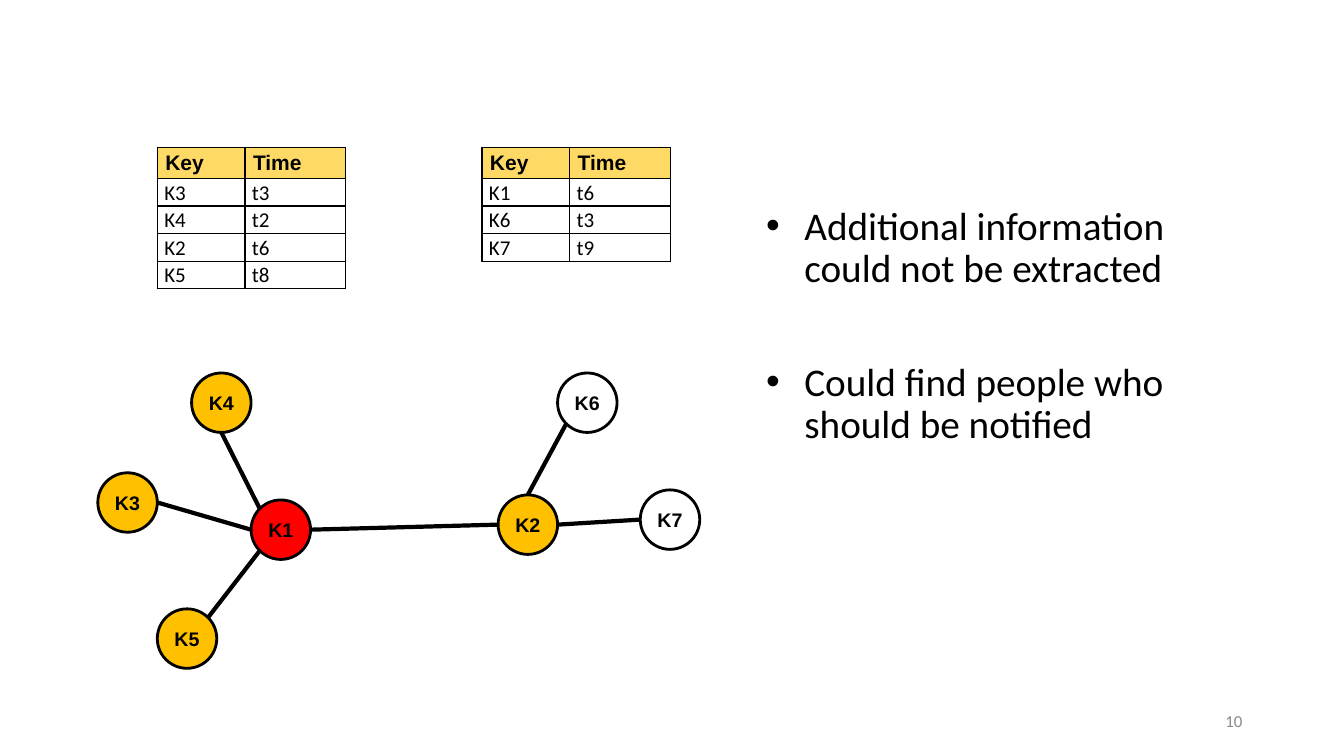
from dataclasses import dataclass
from math import cos, radians, sin

from lxml.etree import SubElement
from pptx import Presentation
from pptx.dml.color import RGBColor
from pptx.enum.shapes import MSO_CONNECTOR as Connector, MSO_SHAPE as Shape
from pptx.enum.text import MSO_ANCHOR as Anchor, PP_ALIGN as Align
from pptx.oxml.ns import qn
from pptx.util import Inches, Pt


@dataclass(frozen=True)
class Theme:
    ink: str = "000000"
    header: str = "FFD966"
    infected: str = "FF0000"
    contact: str = "FFC000"
    muted: str = "888888"
    label_font: str = "Arial"
    body_font: str = "Calibri"
    body_size: int = 28
    cell_size: int = 15
    node_size: int = 14
    number_size: int = 12
    border: int = 1
    outline: int = 2
    edge: int = 3


DIAMETER = 0.59
ROW_HEIGHT = 0.25
COLUMN_WIDTHS = (0.87, 1)

# Compass angles where edges meet a node, clockwise from the right
RIGHT, BOTTOM, BOTTOM_LEFT, LEFT, TOP_LEFT, TOP, TOP_RIGHT = 0, 90, 135, 180, 225, 270, 315


def write(para, text, *, size, font, color, bold=False, align=None, spacing=None, before=None):
    """Put one formatted span of text in a paragraph."""
    span = para.add_run()
    span.text = text
    span.font.size = Pt(size)
    span.font.name = font
    span.font.bold = bold
    span.font.color.rgb = RGBColor.from_string(color)
    para.alignment = align
    para.line_spacing = spacing
    if before is not None:
        para.space_before = Pt(before)


class ContactPage:
    def __init__(self, page, theme):
        self.page = page
        self.theme = theme
        self.nodes = {}

    def paint(self, item, color):
        if color is None:
            item.fill.background()
        else:
            item.fill.solid()
            item.fill.fore_color.rgb = RGBColor.from_string(color)

    def rule(self, line, width):
        line.color.rgb = RGBColor.from_string(self.theme.ink)
        line.width = Pt(width)

    def border(self, cell):
        properties = cell._tc.get_or_add_tcPr()
        for side in ("a:lnL", "a:lnR", "a:lnT", "a:lnB"):
            line = SubElement(properties, qn(side), w=str(Pt(self.theme.border)))
            fill = SubElement(line, qn("a:solidFill"))
            SubElement(fill, qn("a:srgbClr"), val=self.theme.ink)

    def table(self, left, top, rows):
        theme = self.theme
        table = self.page.shapes.add_table(
            len(rows), len(COLUMN_WIDTHS), Inches(left), Inches(top),
            Inches(sum(COLUMN_WIDTHS)), Inches(ROW_HEIGHT * len(rows))).table
        table.horz_banding = False
        for column, width in zip(table.columns, COLUMN_WIDTHS):
            column.width = Inches(width)
        for row_index, row in enumerate(rows):
            heading = row_index == 0
            margins = (0.08, 0.04, 0.04, 0.04) if heading else (0.07, 0, 0.07, 0)
            for column_index, text in enumerate(row):
                cell = table.cell(row_index, column_index)
                (cell.margin_left, cell.margin_top,
                 cell.margin_right, cell.margin_bottom) = map(Inches, margins)
                cell.vertical_anchor = Anchor.MIDDLE
                self.border(cell)
                self.paint(cell, theme.header if heading else None)
                write(cell.text_frame.paragraphs[0], text, size=theme.cell_size,
                      font=theme.label_font if heading else theme.body_font,
                      color=theme.ink, bold=heading, spacing=None if heading else 1.07)

    def node(self, name, left, top, color):
        theme = self.theme
        circle = self.page.shapes.add_shape(
            Shape.OVAL, Inches(left), Inches(top), Inches(DIAMETER), Inches(DIAMETER))
        circle.shadow.inherit = False
        self.paint(circle, color)
        self.rule(circle.line, theme.outline)
        frame = circle.text_frame
        frame.margin_left = frame.margin_right = frame.margin_top = frame.margin_bottom = 0
        frame.vertical_anchor = Anchor.MIDDLE
        write(frame.paragraphs[0], name, size=theme.node_size, font=theme.label_font,
              color=theme.ink, bold=True, align=Align.CENTER)
        self.nodes[name] = (left + DIAMETER / 2, top + DIAMETER / 2)

    def rim(self, name, angle):
        x, y = self.nodes[name]
        radius = DIAMETER / 2
        return (Inches(x + radius * cos(radians(angle))),
                Inches(y + radius * sin(radians(angle))))

    def edge(self, start, start_angle, end, end_angle):
        line = self.page.shapes.add_connector(
            Connector.STRAIGHT, *self.rim(start, start_angle), *self.rim(end, end_angle))
        self.rule(line.line, self.theme.edge)
        SubElement(line._element.spPr, qn("a:effectLst"))

    def text_box(self, left, top, width, height, anchor=Anchor.TOP):
        box = self.page.shapes.add_textbox(
            Inches(left), Inches(top), Inches(width), Inches(height))
        frame = box.text_frame
        frame.word_wrap = True
        frame.vertical_anchor = anchor
        return frame

    def bullets(self, left, top, width, height, items):
        theme = self.theme
        frame = self.text_box(left, top, width, height)
        for index, text in enumerate(items):
            para = frame.add_paragraph() if index else frame.paragraphs[0]
            write(para, text, size=theme.body_size, font=theme.body_font, color=theme.ink,
                  spacing=0.9, before=51 if index else 10)
            properties = para._p.get_or_add_pPr()
            properties.set("marL", str(Inches(0.5)))
            properties.set("indent", str(Inches(-0.38)))
            SubElement(properties, qn("a:buFont"), typeface=theme.label_font)
            SubElement(properties, qn("a:buChar"), char="•")

    def page_number(self, left, top, width, height, text):
        theme = self.theme
        frame = self.text_box(left, top, width, height, Anchor.MIDDLE)
        write(frame.paragraphs[0], text, size=theme.number_size, font=theme.body_font,
              color=theme.muted, align=Align.RIGHT)


def main():
    deck = Presentation()
    deck.slide_width, deck.slide_height = Inches(13.33), Inches(7.5)
    theme = Theme()
    blank_layout = deck.slide_layouts[6]
    page = ContactPage(deck.slides.add_slide(blank_layout), theme)

    # Contact lists of K1 and K2
    heading = ("Key", "Time")
    page.table(1.56, 1.46, [heading, ("K3", "t3"), ("K4", "t2"), ("K2", "t6"), ("K5", "t8")])
    page.table(4.78, 1.46, [heading, ("K1", "t6"), ("K6", "t3"), ("K7", "t9")])

    # Contact graph
    for name, left, top, color in (
            ("K2", 4.94, 4.91, theme.contact),
            ("K1", 2.49, 4.96, theme.infected),
            ("K3", 0.97, 4.69, theme.contact),
            ("K5", 1.56, 6.04, theme.contact),
            ("K7", 6.35, 4.86, None),
            ("K4", 1.9, 3.7, theme.contact),
            ("K6", 5.53, 3.7, None)):
        page.node(name, left, top, color)
    for link in (
            ("K1", RIGHT, "K2", LEFT),
            ("K4", BOTTOM, "K1", TOP_LEFT),
            ("K1", LEFT, "K3", RIGHT),
            ("K1", BOTTOM_LEFT, "K5", TOP_RIGHT),
            ("K6", BOTTOM_LEFT, "K2", TOP),
            ("K7", LEFT, "K2", RIGHT)):
        page.edge(*link)

    # Findings and page number
    page.bullets(7.38, 2, 5.03, 4.76, [
        "Additional information could not be extracted",
        "Could find people who should be notified"])
    page.page_number(9.42, 6.95, 3, 0.4, "10")

    deck.save("out.pptx")


if __name__ == "__main__":
    main()
